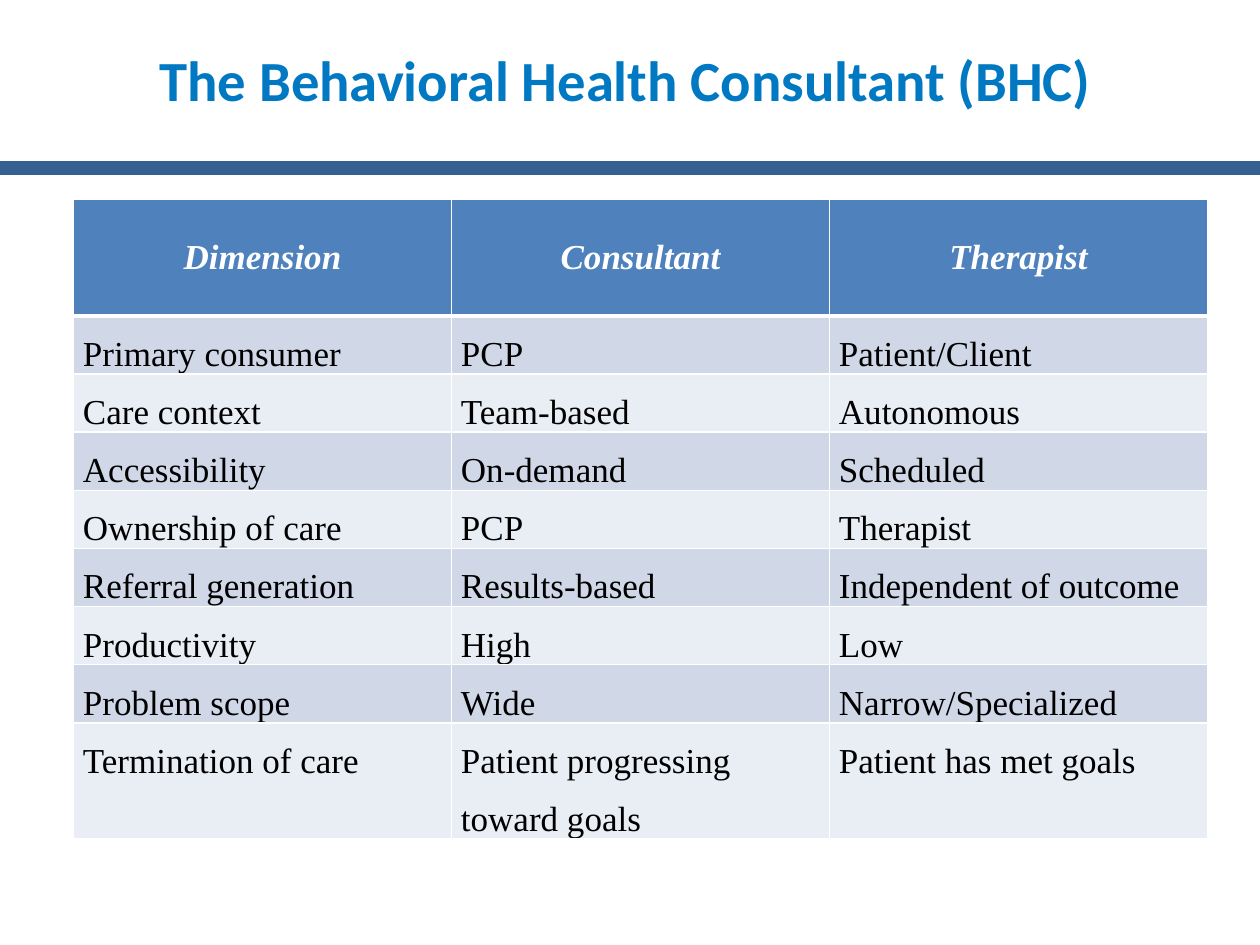
from lxml.etree import SubElement
from pptx import Presentation
from pptx.dml.color import RGBColor
from pptx.enum.shapes import MSO_CONNECTOR
from pptx.enum.text import MSO_ANCHOR, PP_ALIGN
from pptx.oxml.ns import qn
from pptx.util import Pt

TITLE = "The Behavioral Health Consultant (BHC)"
HEADINGS = ("Dimension", "Consultant", "Therapist")
COMPARISON = [
    ("Primary consumer", "PCP", "Patient/Client"),
    ("Care context", "Team-based", "Autonomous"),
    ("Accessibility", "On-demand", "Scheduled"),
    ("Ownership of care", "PCP", "Therapist"),
    ("Referral generation", "Results-based", "Independent of outcome"),
    ("Productivity", "High", "Low"),
    ("Problem scope", "Wide", "Narrow/Specialized"),
    ("Termination of care", "Patient progressing toward goals", "Patient has met goals"),
]

WHITE = RGBColor(0xFF, 0xFF, 0xFF)
BLACK = RGBColor(0, 0, 0)
TITLE_BLUE = RGBColor(0x00, 0x79, 0xC2)
RULE_BLUE = RGBColor(0x37, 0x60, 0x92)
HEADER_BLUE = RGBColor(0x4F, 0x81, 0xBD)
BANDS = (RGBColor(0xD0, 0xD8, 0xE8), RGBColor(0xE9, 0xED, 0xF4))

SLIDE_WIDTH, SLIDE_HEIGHT = 720, 540
RULE_Y = 96
TABLE_LEFT, TABLE_TOP, COLUMN_WIDTH = 42, 114, 216
LINE_PITCH = 33.2
ROW_HEIGHT = 33.25
TALL_ROW_HEIGHT = 2 * ROW_HEIGHT


def add_run(paragraph, text, font_name, size, color, bold=False, italic=False):
    run = paragraph.add_run()
    run.text = text
    font = run.font
    font.name, font.size = font_name, Pt(size)
    font.bold, font.italic = bold, italic
    font.color.rgb = color


def add_borders(cell, **widths):
    """Draw white cell edges; widths in points, keyed L, R, T and B."""
    properties = cell._tc.get_or_add_tcPr()
    for side, width in widths.items():
        edge = SubElement(properties, qn(f"a:ln{side}"), w=str(Pt(width)))
        fill = SubElement(edge, qn("a:solidFill"))
        SubElement(fill, qn("a:srgbClr"), val=str(WHITE))


def add_title(slide):
    box = slide.shapes.add_textbox(Pt(84), Pt(0), Pt(552), Pt(90))
    frame = box.text_frame
    frame.word_wrap = True
    frame.vertical_anchor = MSO_ANCHOR.MIDDLE
    frame.margin_left = Pt(2)
    paragraph = frame.paragraphs[0]
    paragraph.alignment = PP_ALIGN.CENTER
    add_run(paragraph, TITLE, "Calibri", 32.4, TITLE_BLUE, bold=True)


def add_rule(slide):
    rule = slide.shapes.add_connector(
        MSO_CONNECTOR.STRAIGHT, Pt(0), Pt(RULE_Y), Pt(SLIDE_WIDTH), Pt(RULE_Y))
    rule.line.color.rgb = RULE_BLUE
    rule.line.width = Pt(8)
    SubElement(rule._element.spPr, qn("a:effectLst"))


def fill_cell(cell, text, row_index):
    is_header = row_index == 0
    add_borders(cell, L=1, R=1, T=3 if row_index == 1 else 1, B=3 if is_header else 1)
    cell.fill.solid()
    cell.fill.fore_color.rgb = HEADER_BLUE if is_header else BANDS[(row_index - 1) % 2]
    cell.margin_left = cell.margin_right = Pt(5.4)
    cell.margin_top = cell.margin_bottom = 0
    paragraph = cell.text_frame.paragraphs[0]
    if is_header:
        cell.vertical_anchor = MSO_ANCHOR.MIDDLE
        paragraph.alignment = PP_ALIGN.CENTER
    else:
        paragraph.line_spacing = Pt(LINE_PITCH)
    add_run(paragraph, text, "Times New Roman", 20,
            WHITE if is_header else BLACK, bold=is_header, italic=is_header)


def add_comparison(slide):
    rows = [HEADINGS, *COMPARISON]
    heights = [TALL_ROW_HEIGHT, *[ROW_HEIGHT] * (len(rows) - 2), TALL_ROW_HEIGHT]
    table = slide.shapes.add_table(
        len(rows), len(HEADINGS), Pt(TABLE_LEFT), Pt(TABLE_TOP),
        Pt(COLUMN_WIDTH * len(HEADINGS)), Pt(sum(heights))).table
    for column in table.columns:
        column.width = Pt(COLUMN_WIDTH)
    for row_index, (texts, height) in enumerate(zip(rows, heights)):
        table.rows[row_index].height = Pt(height)
        for column_index, text in enumerate(texts):
            fill_cell(table.cell(row_index, column_index), text, row_index)


def main():
    presentation = Presentation()
    presentation.slide_width = Pt(SLIDE_WIDTH)
    presentation.slide_height = Pt(SLIDE_HEIGHT)
    slide = presentation.slides.add_slide(presentation.slide_layouts[6])
    add_rule(slide)
    add_title(slide)
    add_comparison(slide)
    presentation.save("out.pptx")


if __name__ == "__main__":
    main()
